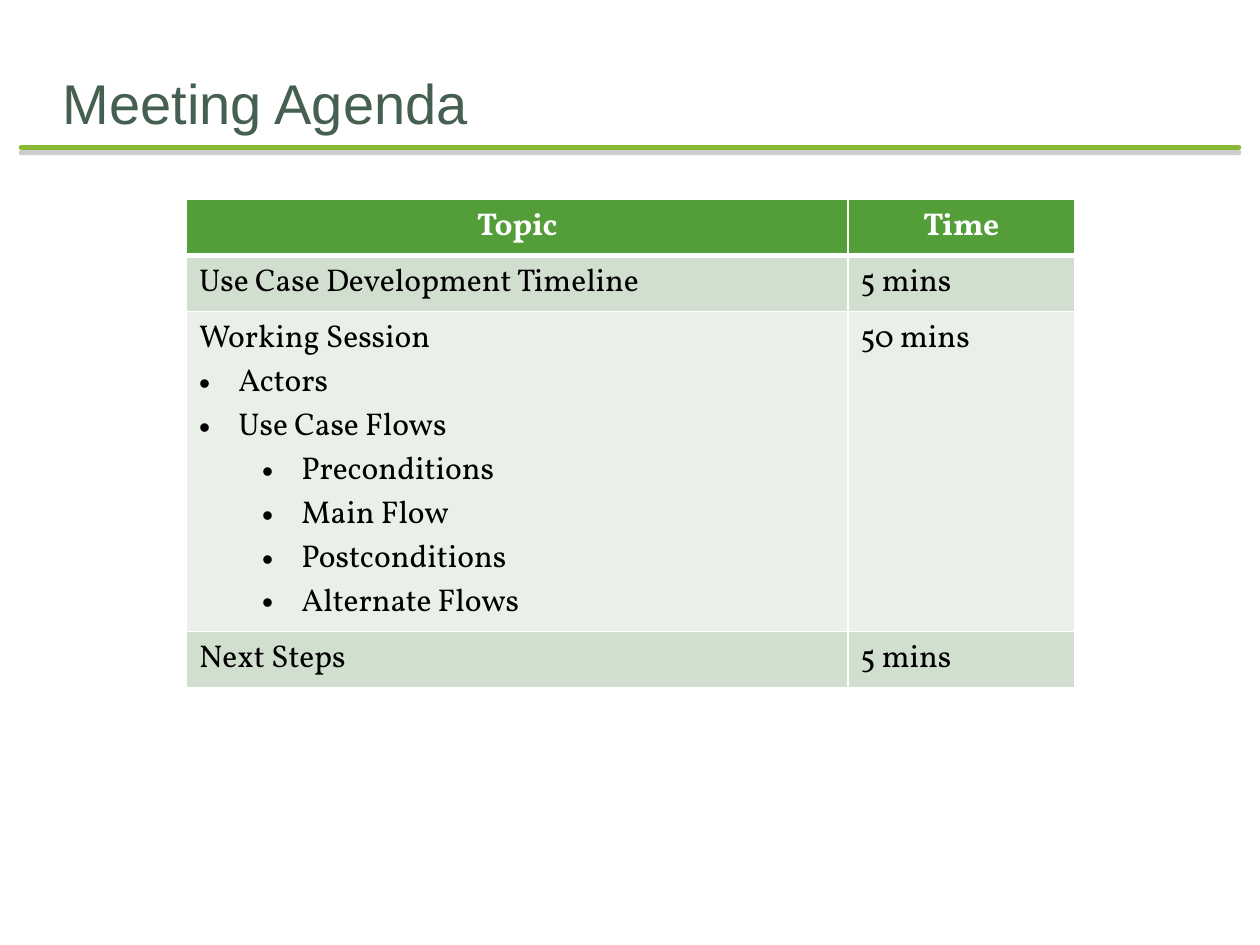
"""Build the meeting agenda slide."""
from lxml import etree
from pptx import Presentation
from pptx.dml.color import RGBColor
from pptx.enum.shapes import MSO_CONNECTOR
from pptx.enum.text import MSO_ANCHOR, PP_ALIGN
from pptx.oxml import parse_xml
from pptx.oxml.ns import nsdecls, qn
from pptx.util import Cm, Pt

STRAIGHT = MSO_CONNECTOR.STRAIGHT
BOTTOM = MSO_ANCHOR.BOTTOM
LEFT, CENTER = PP_ALIGN.LEFT, PP_ALIGN.CENTER

WHITE = RGBColor(0xFF, 0xFF, 0xFF)
BLACK = RGBColor(0x00, 0x00, 0x00)
TITLE_COLOR = RGBColor(0x45, 0x5F, 0x51)
RULE_COLOR = RGBColor(0x8A, 0xB8, 0x33)
SHADOW_COLOR = RGBColor(0x80, 0x80, 0x80)
HEADER_FILL = RGBColor(0x54, 0x9E, 0x39)
BAND_FILLS = (RGBColor(0xD1, 0xDF, 0xCE), RGBColor(0xE9, 0xF0, 0xE8))

TITLE_FONT, BODY_FONT = "Arial", "Vollkorn"
COLUMN_WIDTHS = (Cm(13.33), Cm(4.57))
ROW_HEIGHTS = (Cm(1.13), Cm(1.13), Cm(6.45), Cm(1.13))
BULLET_HANG = Cm(0.79)
LEVEL_INDENT = Cm(1.27)

HEADER = ("Topic", "Time")
AGENDA = (
    ([("Use Case Development Timeline", None)], "5 mins"),
    ([("Working Session", None),
      ("Actors", 0),
      ("Use Case Flows", 0),
      ("Preconditions", 1),
      ("Main Flow", 1),
      ("Postconditions", 1),
      ("Alternate Flows", 1)], "50 mins"),
    ([("Next Steps", None)], "5 mins"),
)


def write_text(paragraph, text, font=BODY_FONT, size=18, color=BLACK, bold=False, align=LEFT):
    """Write one formatted run into a paragraph."""
    paragraph.alignment = align
    run = paragraph.add_run()
    run.text = text
    run.font.name = font
    run.font.size = Pt(size)
    run.font.bold = bold
    run.font.color.rgb = color


def add_bullet(paragraph, level):
    """Give a paragraph a hanging bullet at the given level."""
    paragraph.level = level
    properties = paragraph._p.get_or_add_pPr()
    properties.set("marL", str(BULLET_HANG + level * LEVEL_INDENT))
    properties.set("indent", str(-BULLET_HANG))
    etree.SubElement(properties, qn("a:buFont"), typeface="Arial")
    etree.SubElement(properties, qn("a:buChar"), char="•")


def add_title(slide, text):
    """Add the slide title."""
    box = slide.shapes.add_textbox(Cm(1.27), Cm(1.27), Cm(22.86), Cm(1.47))
    frame = box.text_frame
    frame.word_wrap = True
    frame.vertical_anchor = BOTTOM
    frame.margin_left = frame.margin_right = frame.margin_bottom = 0
    frame.margin_top = Cm(0.13)
    write_text(frame.paragraphs[0], text, font=TITLE_FONT, size=32, color=TITLE_COLOR)


def add_title_rule(slide):
    """Add the round-ended rule below the title, with its drop shadow."""
    rule = slide.shapes.add_connector(STRAIGHT, Cm(0.43), Cm(2.97), Cm(24.97), Cm(2.97))
    rule.line.color.rgb = RULE_COLOR
    rule.line.width = Pt(3)
    properties = rule.element.spPr
    properties.find(qn("a:ln")).set("cap", "rnd")
    properties.append(parse_xml(
        f'<a:effectLst {nsdecls("a")}>'
        f'<a:outerShdw blurRad="0" dist="{Pt(3)}" dir="5400000" algn="t" rotWithShape="0">'
        f'<a:srgbClr val="{SHADOW_COLOR}"><a:alpha val="40000"/></a:srgbClr>'
        '</a:outerShdw></a:effectLst>'))


def style_cell(cell, fill, top=1, bottom=1):
    """Fill a cell and draw its white borders, with widths in points."""
    cell.fill.solid()
    cell.fill.fore_color.rgb = fill
    properties = cell._tc.get_or_add_tcPr()
    borders = (("lnL", 1), ("lnR", 1), ("lnT", top), ("lnB", bottom))
    for position, (side, width) in enumerate(borders):
        properties.insert(position, parse_xml(
            f'<a:{side} {nsdecls("a")} w="{Pt(width)}"><a:solidFill>'
            f'<a:srgbClr val="{WHITE}"/></a:solidFill></a:{side}>'))


def fill_topics(cell, topics):
    """Write the topics of one row, one paragraph each."""
    frame = cell.text_frame
    for index, (text, level) in enumerate(topics):
        paragraph = frame.add_paragraph() if index else frame.paragraphs[0]
        write_text(paragraph, text)
        if level is not None:
            add_bullet(paragraph, level)


def add_agenda_table(slide):
    """Add the table of topics and times."""
    table = slide.shapes.add_table(
        len(ROW_HEIGHTS), len(COLUMN_WIDTHS), Cm(3.76), Cm(4.02),
        sum(COLUMN_WIDTHS), sum(ROW_HEIGHTS)).table
    for column, width in zip(table.columns, COLUMN_WIDTHS):
        column.width = width
    for row, height in zip(table.rows, ROW_HEIGHTS):
        row.height = height
    for cell, text in zip(table.rows[0].cells, HEADER):
        style_cell(cell, HEADER_FILL, bottom=3)
        write_text(cell.text_frame.paragraphs[0], text, color=WHITE, bold=True, align=CENTER)
    for index, (topics, time) in enumerate(AGENDA):
        topic_cell, time_cell = table.rows[index + 1].cells
        for cell in (topic_cell, time_cell):
            style_cell(cell, BAND_FILLS[index % 2], top=1 if index else 3)
        fill_topics(topic_cell, topics)
        write_text(time_cell.text_frame.paragraphs[0], time)


def main():
    """Build and save the presentation."""
    presentation = Presentation()
    presentation.slide_width = Cm(25.4)
    presentation.slide_height = Cm(19.05)
    slide = presentation.slides.add_slide(presentation.slide_layouts[6])
    add_title_rule(slide)
    add_title(slide, "Meeting Agenda")
    add_agenda_table(slide)
    presentation.save("out.pptx")


if __name__ == "__main__":
    main()
